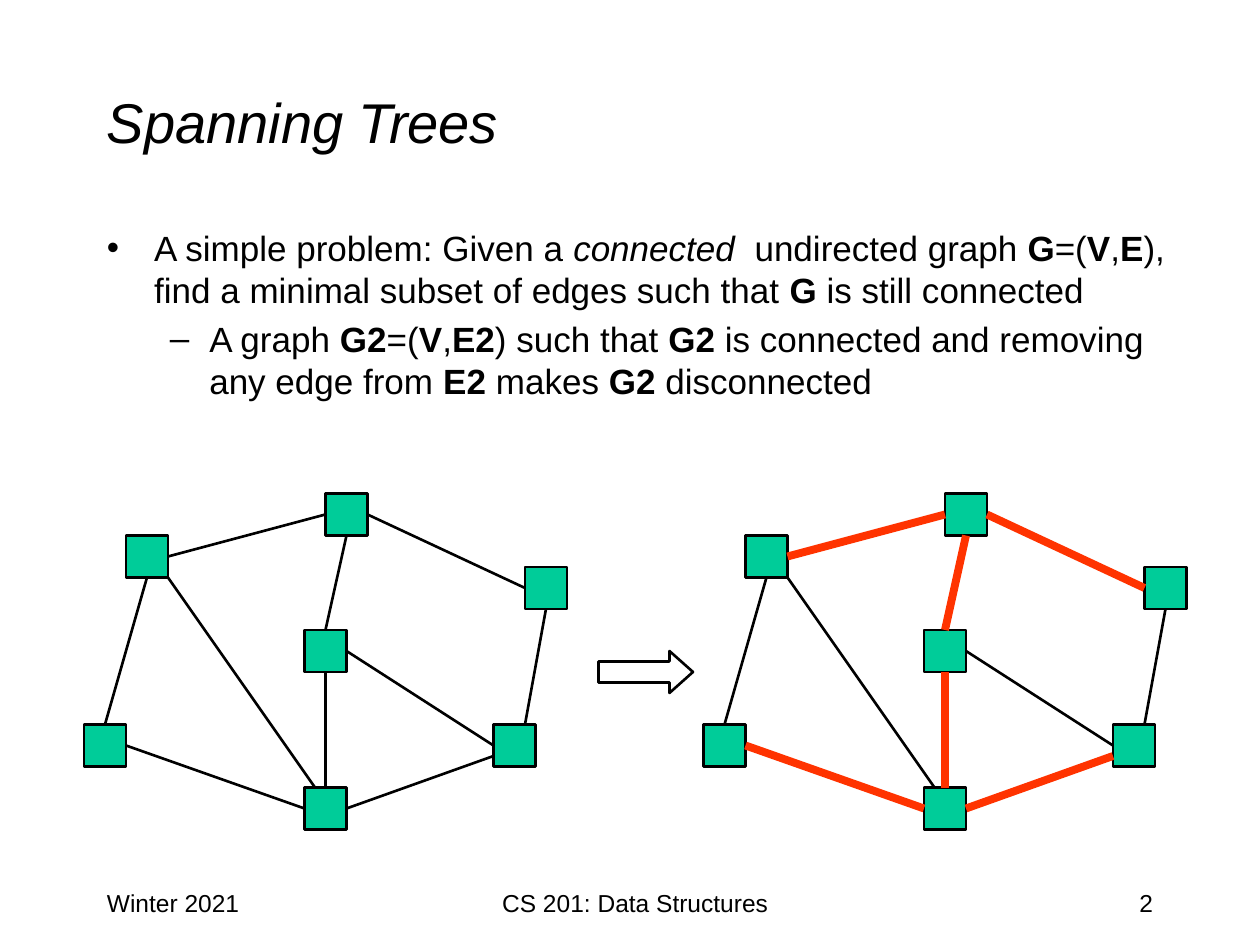
from dataclasses import dataclass

from lxml import etree
from pptx import Presentation
from pptx.dml.color import RGBColor
from pptx.enum.shapes import MSO_CONNECTOR, MSO_SHAPE
from pptx.enum.text import MSO_ANCHOR, PP_ALIGN
from pptx.oxml.ns import qn
from pptx.util import Pt

RECT, ARROW = MSO_SHAPE.RECTANGLE, MSO_SHAPE.RIGHT_ARROW
STRAIGHT = MSO_CONNECTOR.STRAIGHT
TOP, MIDDLE = MSO_ANCHOR.TOP, MSO_ANCHOR.MIDDLE
LEFT, CENTER, RIGHT = PP_ALIGN.LEFT, PP_ALIGN.CENTER, PP_ALIGN.RIGHT


@dataclass(frozen=True)
class Theme:
    font: str = "Arial"
    ink: str = "000000"
    paper: str = "FFFFFF"
    node: str = "00CC99"
    tree: str = "FF3300"
    title_size: float = 32
    body_size: float = 20
    footer_size: float = 14
    thin: float = 1.5
    thick: float = 4.5


THEME = Theme()

TITLE = [("Spanning Trees", "i")]
BODY = [
    ("•", 27, -27, [
        ("A simple problem: Given a ", ""), ("connected ", "i"),
        (" undirected graph ", ""), ("G", "b"), ("=(", ""), ("V", "b"),
        (",", ""), ("E", "b"),
        ("), find a minimal subset of edges such that ", ""),
        ("G", "b"), (" is still connected", ""),
    ]),
    ("–", 58.5, -22.5, [
        ("A graph ", ""), ("G2", "b"), ("=(", ""), ("V", "b"), (",", ""),
        ("E2", "b"), (") such that ", ""), ("G2", "b"),
        (" is connected and removing any edge from ", ""), ("E2", "b"),
        (" makes ", ""), ("G2", "b"), (" disconnected", ""),
    ]),
]
FOOTERS = [
    ("Winter 2021", 54, 150, LEFT),
    ("CS 201: Data Structures", 228, 270, CENTER),
    ("2", 516, 150, RIGHT),
]

NODE_SIZE = 24
NODES = {
    "A": (72, 306), "B": (48, 414), "C": (174, 450), "D": (282, 414),
    "E": (174, 360), "F": (186, 282), "G": (300, 324),
}
SIDES = {
    "left": (0, 0.5), "right": (1, 0.5), "top": (0.5, 0), "bottom": (0.5, 1),
    "corner": (1, 1), "top_left": (0.25, 0), "top_right": (0.75, 0),
    "low_left": (0, 0.75),
}
EDGES = [
    ("A", "right", "F", "left", True),
    ("F", "bottom", "E", "top", True),
    ("F", "right", "G", "left", True),
    ("E", "right", "D", "left", False),
    ("G", "bottom", "D", "top_right", False),
    ("E", "bottom", "C", "top", True),
    ("C", "right", "D", "low_left", True),
    ("B", "right", "C", "left", True),
    ("A", "bottom", "B", "top", False),
    ("A", "corner", "C", "top_left", False),
]
GRAPHS = [(0, False), (354, True)]


def rgb(value):
    return RGBColor.from_string(value)


def add_box(s, x, y, w, h, anchor=TOP):
    tf = s.shapes.add_textbox(Pt(x), Pt(y), Pt(w), Pt(h)).text_frame
    tf.word_wrap = True
    tf.vertical_anchor = anchor
    return tf


def add_runs(p, runs, size):
    for text, style in runs:
        r = p.add_run()
        r.text = text
        r.font.name, r.font.size = THEME.font, Pt(size)
        r.font.color.rgb = rgb(THEME.ink)
        r.font.bold, r.font.italic = style == "b", style == "i"


def add_bullet(p, char, margin, indent):
    p.space_before = Pt(4)
    props = p._p.get_or_add_pPr()
    props.set("marL", str(Pt(margin)))
    props.set("indent", str(Pt(indent)))
    etree.SubElement(props, qn("a:buFont")).set("typeface", THEME.font)
    etree.SubElement(props, qn("a:buChar")).set("char", char)


def add_outlined(s, kind, x, y, w, h, fill):
    sp = s.shapes.add_shape(kind, Pt(x), Pt(y), Pt(w), Pt(h))
    sp.shadow.inherit = False
    sp.fill.solid()
    sp.fill.fore_color.rgb = rgb(fill)
    sp.line.color.rgb = rgb(THEME.ink)
    sp.line.width = Pt(THEME.thin)
    return sp


def anchor_point(node, side, dx):
    (x, y), (fx, fy) = NODES[node], SIDES[side]
    return Pt(x + dx + fx * NODE_SIZE), Pt(y + fy * NODE_SIZE)


def add_graph(s, dx, show_tree):
    for x, y in NODES.values():
        add_outlined(s, RECT, x + dx, y, NODE_SIZE, NODE_SIZE, THEME.node)
    for start, start_side, end, end_side, in_tree in EDGES:
        marked = show_tree and in_tree
        edge = s.shapes.add_connector(
            STRAIGHT,
            *anchor_point(start, start_side, dx),
            *anchor_point(end, end_side, dx),
        )
        edge.line.color.rgb = rgb(THEME.tree if marked else THEME.ink)
        edge.line.width = Pt(THEME.thick if marked else THEME.thin)
        etree.SubElement(edge._element.spPr, qn("a:effectLst"))


def main():
    """Build the spanning trees slide."""
    prs = Presentation()
    prs.slide_width, prs.slide_height = Pt(720), Pt(540)
    s = prs.slides.add_slide(prs.slide_layouts[6])

    tf = add_box(s, 54, 24, 612, 90, MIDDLE)
    add_runs(tf.paragraphs[0], TITLE, THEME.title_size)

    tf = add_box(s, 54, 126, 624, 144)
    for i, (char, margin, indent, runs) in enumerate(BODY):
        p = tf.add_paragraph() if i else tf.paragraphs[0]
        add_bullet(p, char, margin, indent)
        add_runs(p, runs, THEME.body_size)

    for text, x, w, align in FOOTERS:
        p = add_box(s, x, 504, w, 36).paragraphs[0]
        p.alignment = align
        add_runs(p, [(text, "")], THEME.footer_size)

    for dx, show_tree in GRAPHS:
        add_graph(s, dx, show_tree)

    arrow = add_outlined(s, ARROW, 342, 372, 54, 24, THEME.paper)
    arrow.adjustments[0], arrow.adjustments[1] = 0.5, 0.56

    prs.save("out.pptx")


if __name__ == "__main__":
    main()
